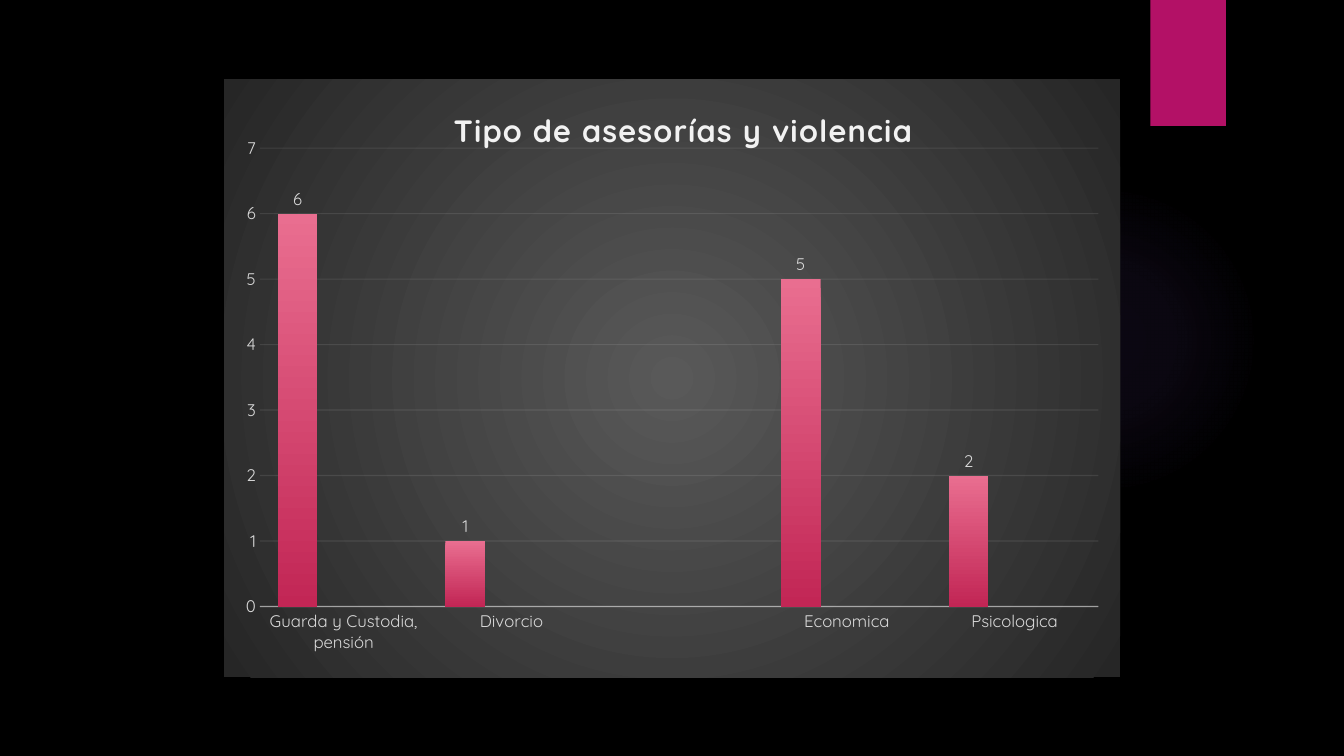
from lxml.etree import SubElement as Sub
from pptx import Presentation
from pptx.chart.data import CategoryChartData as Data
from pptx.dml.color import RGBColor as Rgb
from pptx.enum.chart import XL_CHART_TYPE as Kind, XL_LABEL_POSITION as Spot, XL_TICK_MARK as Tick
from pptx.enum.shapes import MSO_SHAPE as Form
from pptx.oxml import parse_xml
from pptx.oxml.ns import nsdecls, qn
from pptx.util import Inches, Pt

WIDE, HIGH = Inches(13.33), Inches(7.5)
FACE = "Quicksand"
CATS = ["Guarda y Custodia, pensión", "Divorcio", "", "Economica", "Psicologica"]
ROWS = [
    ("Series 1", [6, 1, None, 5, 2], "E96E90", "C22655"),
    ("Series 2", [None] * 5, "EEAD6D", "C97721"),
    ("Series 3", [None] * 5, "DD6AD9", "AE2EAA"),
]
RADIAL = (
    '<a:path path="circle"><a:fillToRect l="50000" t="50000" '
    'r="50000" b="50000"/></a:path>'
)
LINEAR = '<a:lin ang="5400000" scaled="0"/>'


def tint(color):
    return Rgb.from_string(color)


def area(left, top, width, height):
    return [
        int(size * part / 100)
        for size, part in zip((WIDE, HIGH, WIDE, HIGH), (left, top, width, height))
    ]


def shade(props, stops, way):
    marks = "".join(
        f'<a:gs pos="{pos * 1000}"><a:srgbClr val="{color}">'
        f'<a:alpha val="{alpha * 1000}"/></a:srgbClr></a:gs>'
        for pos, color, alpha in stops
    )
    fill = parse_xml(
        f'<a:gradFill {nsdecls("a")} rotWithShape="1">'
        f"<a:gsLst>{marks}</a:gsLst>{way}</a:gradFill>"
    )
    props.replace(props.find(qn("a:noFill")), fill)


def add_form(slide, form, box):
    shape = slide.shapes.add_shape(form, *box)
    shape.shadow.inherit = False
    shape.line.fill.background()
    shape.fill.background()
    return shape


def style(font, size, color, bold=False):
    font.name = FACE
    font.size = Pt(size)
    font.bold = bold
    font.color.rgb = tint(color)


def rule(line, width, alpha):
    line.width = Pt(width)
    line.color.rgb = tint("F2F2F2")
    color = next(line._get_or_add_ln().iter(qn("a:srgbClr")))
    Sub(color, qn("a:alpha")).set("val", str(alpha * 1000))


def place(node, index, **parts):
    for old in node.findall(qn("c:layout")):
        node.remove(old)
    layout = parse_xml(f'<c:layout {nsdecls("c")}><c:manualLayout/></c:layout>')
    for name, value in parts.items():
        Sub(layout[0], qn(f"c:{name}")).set("val", str(value))
    node.insert(index, layout)


def add_title(chart, text):
    chart.has_title = True
    title = chart.chart_title
    run = title.text_frame.paragraphs[0].add_run()
    run.text = text
    style(run.font, 22, "F2F2F2", True)
    run._r.get_or_add_rPr().set("spc", "100")
    place(title._element, 1, xMode="edge", yMode="edge", x=0.25, y=0.04)


def set_axes(chart):
    cat, val = chart.category_axis, chart.value_axis
    for axis in (cat, val):
        axis.major_tick_mark = axis.minor_tick_mark = Tick.NONE
        style(axis.tick_labels.font, 12, "D9D9D9")
    rule(cat.format.line, 1, 54)
    val.format.line.fill.background()
    val.minimum_scale, val.maximum_scale, val.major_unit = 0, 7, 1
    val.has_major_gridlines = True
    rule(val.major_gridlines.format.line, 0.75, 10)


def set_bars(plot):
    plot.gap_width, plot.overlap = 90, -16
    plot.vary_by_categories = False
    for bars, (_, _, start, end) in zip(plot.series, ROWS):
        bars.format.fill.background()
        props = bars._element.find(qn("c:spPr"))
        shade(props, [(0, start, 100), (100, end, 100)], LINEAR)
        labels = bars.data_labels
        labels.show_value = True
        labels.position = Spot.OUTSIDE_END
        style(labels.font, 12, "D9D9D9")


def add_graph(slide, box):
    data = Data()
    data.categories = CATS
    for name, values, _, _ in ROWS:
        data.add_series(name, values)
    chart = slide.shapes.add_chart(Kind.COLUMN_CLUSTERED, *box, data).chart
    chart.has_legend = False
    style(chart.font, 10, "FFFFFF")
    add_title(chart, "Tipo de asesorías y violencia")
    set_axes(chart)
    set_bars(chart.plots[0])
    body = chart._chartSpace.find(qn("c:chart"))
    place(
        body.find(qn("c:plotArea")), 0, layoutTarget="inner",
        xMode="edge", yMode="edge", x=0.04, y=0.115, w=0.936, h=0.767,
    )
    props = parse_xml(
        f'<c:spPr {nsdecls("c", "a")}><a:noFill/><a:ln><a:noFill/></a:ln></c:spPr>'
    )
    shade(props, [(0, "595959", 100), (100, "262626", 100)], RADIAL)
    body.addnext(props)


def main():
    deck = Presentation()
    deck.slide_width, deck.slide_height = WIDE, HIGH
    slide = deck.slides.add_slide(deck.slide_layouts[6])
    back = slide.background.fill
    back.solid()
    back.fore_color.rgb = tint("000000")
    glow = add_form(slide, Form.OVAL, area(70.58, 24.4, 23.1, 41.07))
    stops = [(pos, "9B6BF2", alpha) for pos, alpha in ((0, 7), (36, 6), (69, 0))]
    shade(glow._element.spPr, stops, RADIAL)
    flag = add_form(slide, Form.RECTANGLE, area(85.6, 0, 5.62, 16.67))
    flag.fill.solid()
    flag.fill.fore_color.rgb = tint("B31166")
    add_graph(slide, area(16.67, 10.5, 66.67, 79.07))
    deck.save("out.pptx")


if __name__ == "__main__":
    main()
